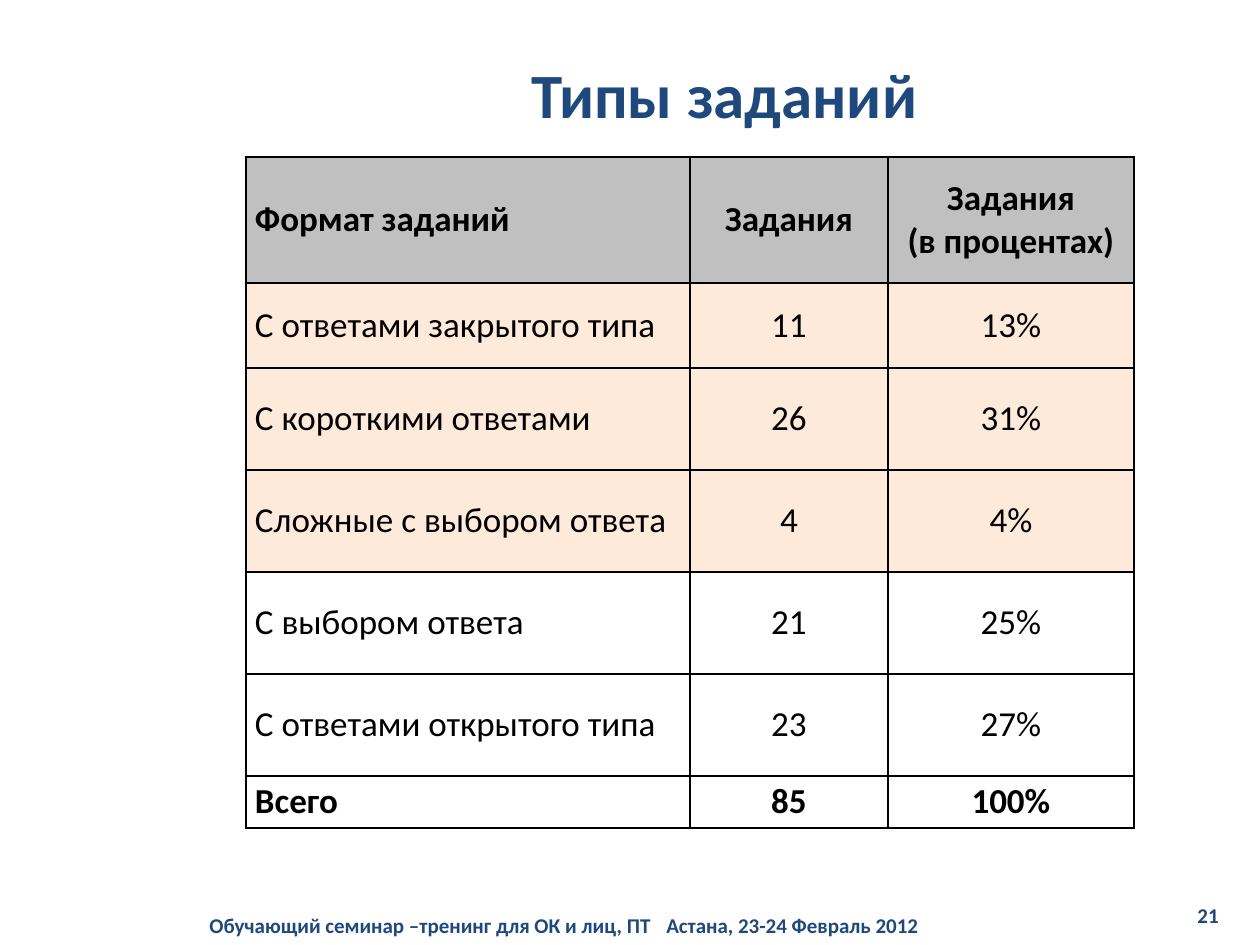
from dataclasses import dataclass

from lxml.etree import SubElement
from pptx import Presentation
from pptx.dml.color import RGBColor
from pptx.enum.text import MSO_ANCHOR as Anchor, PP_ALIGN as Align
from pptx.oxml.ns import qn
from pptx.util import Emu, Pt

EMU_PER_PX = 914400 / 126
FONT = "Calibri"
NAVY = RGBColor(0x1F, 0x49, 0x7D)
BLACK = RGBColor(0x00, 0x00, 0x00)
WHITE = RGBColor(0xFF, 0xFF, 0xFF)
GRAY = RGBColor(0xC0, 0xC0, 0xC0)
PEACH = RGBColor(0xFD, 0xEA, 0xDA)


@dataclass
class Box:
    left: int
    top: int
    width: int
    height: int


@dataclass
class Row:
    height: int
    fill: RGBColor
    texts: tuple[str, str, str]
    bold: bool = False


COLUMN_WIDTHS = (444, 198, 246)
ROWS = (
    Row(126, GRAY, ("Формат заданий", "Задания", "Задания\n(в процентах)"), bold=True),
    Row(85, PEACH, ("С ответами закрытого типа", "11", "13%")),
    Row(102, PEACH, ("С короткими ответами", "26", "31%")),
    Row(102, PEACH, ("Сложные с выбором ответа", "4", "4%")),
    Row(102, WHITE, ("С выбором ответа", "21", "25%")),
    Row(102, WHITE, ("С ответами открытого типа", "23", "27%")),
    Row(52, WHITE, ("Всего", "85", "100%"), bold=True),
)


def px(value: int) -> Emu:
    return Emu(round(value * EMU_PER_PX))


def emu_box(box: Box) -> tuple:
    return px(box.left), px(box.top), px(box.width), px(box.height)


def write_text(frame, text: str, *, size: int, color: RGBColor = BLACK,
               bold: bool = False, align: Align = Align.LEFT, tab: int = 0) -> None:
    frame.word_wrap = True
    frame.text = text
    for paragraph in frame.paragraphs:
        if tab:
            tabs = SubElement(paragraph._p.get_or_add_pPr(), qn("a:tabLst"))
            SubElement(tabs, qn("a:tab"), pos=str(px(tab)), algn="l")
        paragraph.alignment = align
        for run in paragraph.runs:
            run.font.name = FONT
            run.font.size = Pt(size)
            run.font.bold = bold
            run.font.color.rgb = color


def add_label(slide, box: Box, text: str, **text_format) -> None:
    frame = slide.shapes.add_textbox(*emu_box(box)).text_frame
    frame.vertical_anchor = Anchor.MIDDLE
    write_text(frame, text, size=12, color=NAVY, bold=True, **text_format)


def format_cell(cell, fill: RGBColor) -> None:
    cell.vertical_anchor = Anchor.MIDDLE
    cell.margin_left = cell.margin_right = px(9)
    cell.margin_top = cell.margin_bottom = 0
    # Borders come before the fill in the cell properties
    properties = cell._tc.get_or_add_tcPr()
    for side in ("lnL", "lnR", "lnT", "lnB"):
        line = SubElement(properties, qn(f"a:{side}"), w=str(Pt(1)))
        solid = SubElement(line, qn("a:solidFill"))
        SubElement(solid, qn("a:srgbClr"), val=str(BLACK))
    cell.fill.solid()
    cell.fill.fore_color.rgb = fill


def add_task_table(slide, left: int, top: int) -> None:
    box = Box(left, top, sum(COLUMN_WIDTHS), sum(row.height for row in ROWS))
    table = slide.shapes.add_table(len(ROWS), len(COLUMN_WIDTHS), *emu_box(box)).table
    table.first_row = table.horz_banding = False
    for column, width in zip(table.columns, COLUMN_WIDTHS):
        column.width = px(width)
    for row_index, row in enumerate(ROWS):
        table.rows[row_index].height = px(row.height)
        for column_index, text in enumerate(row.texts):
            cell = table.cell(row_index, column_index)
            format_cell(cell, row.fill)
            write_text(cell.text_frame, text, size=20, bold=row.bold,
                       align=Align.CENTER if column_index else Align.LEFT)


def main() -> None:
    presentation = Presentation()
    presentation.slide_width, presentation.slide_height = px(1260), px(945)
    slide = presentation.slides.add_slide(presentation.slide_layouts[5])

    # Title
    title = slide.shapes.title
    title.left, title.top, title.width, title.height = emu_box(Box(217, 20, 1015, 147))
    title.text_frame.vertical_anchor = Anchor.MIDDLE
    write_text(title.text_frame, "Типы заданий", size=36, color=NAVY, bold=True,
               align=Align.CENTER)

    # Task formats
    add_task_table(slide, 246, 157)

    # Page number and footer
    add_label(slide, Box(1113, 895, 118, 40), "21", align=Align.RIGHT)
    add_label(slide, Box(197, 905, 837, 40),
              "Обучающий семинар –тренинг для ОК и лиц, ПТ\tАстана, 23-24 Февраль 2012",
              tab=457)

    presentation.save("out.pptx")


if __name__ == "__main__":
    main()
